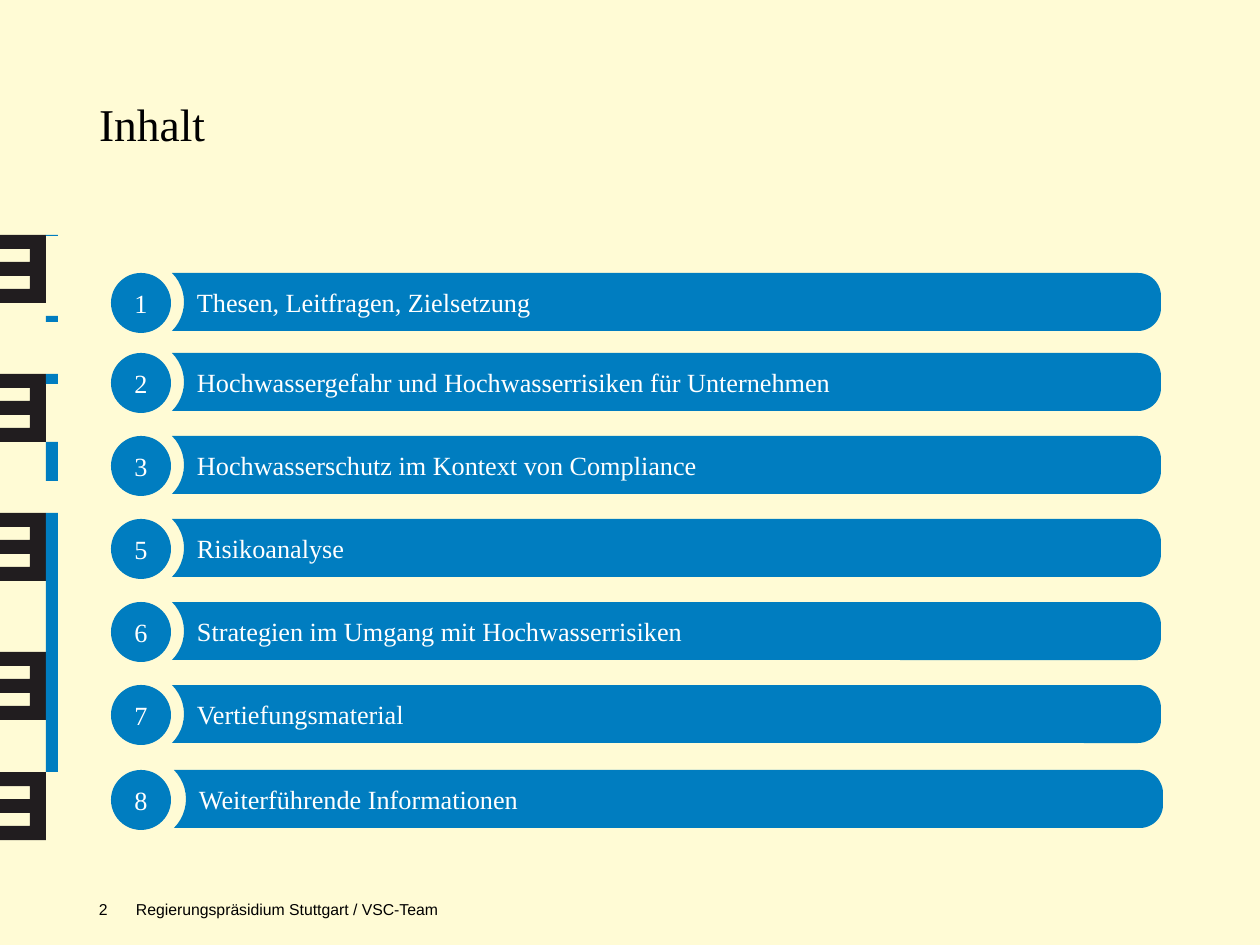
"""Build the agenda slide with numbered bars and a decorative strip at the left edge."""
import math

from pptx import Presentation
from pptx.dml.color import RGBColor
from pptx.enum.shapes import MSO_SHAPE
from pptx.enum.text import MSO_ANCHOR, MSO_AUTO_SIZE, PP_ALIGN
from pptx.util import Pt

RECTANGLE, OVAL = MSO_SHAPE.RECTANGLE, MSO_SHAPE.OVAL
TOP, MIDDLE = MSO_ANCHOR.TOP, MSO_ANCHOR.MIDDLE
LEFT, CENTER = PP_ALIGN.LEFT, PP_ALIGN.CENTER
NO_AUTOFIT = MSO_AUTO_SIZE.NONE
TITLE_ONLY = 5
SCALE = 914400 / 126
COLORS = {"cream": "FFFBD5", "blue": "007DC0", "dark": "211D1F", "white": "FFFFFF", "black": "000000"}
SERIF, SANS = "Times New Roman", "Arial"


def px(*values):
    return [round(value * SCALE) for value in values]


def write(shape, text, font_name, size, color, anchor, alignment, insets, spacing=1.0):
    text_frame = shape.text_frame
    text_frame.text = text
    text_frame.word_wrap = True
    text_frame.auto_size = NO_AUTOFIT
    text_frame.vertical_anchor = anchor
    (text_frame.margin_left, text_frame.margin_top,
     text_frame.margin_right, text_frame.margin_bottom) = px(*insets)
    paragraph = text_frame.paragraphs[0]
    paragraph.alignment = alignment
    paragraph.line_spacing = spacing
    font = paragraph.runs[0].font
    font.name, font.size = font_name, Pt(size)
    font.color.rgb = RGBColor.from_string(COLORS[color])


presentation = Presentation()
presentation.slide_width, presentation.slide_height = px(1260, 945)
slide = presentation.slides.add_slide(presentation.slide_layouts[TITLE_ONLY])
slide.background.fill.solid()
slide.background.fill.fore_color.rgb = RGBColor.from_string(COLORS["cream"])
shapes = slide.shapes
filled = []

comb_edges = [(0, 14), (30, 14), (30, 27), (0, 27), (0, 41), (30, 41),
              (30, 54), (0, 54), (0, 68), (46, 68), (46, 0)]
for top in (235, 374, 513, 652, 772):
    builder = shapes.build_freeform(*px(0, top))
    builder.add_line_segments([px(x, top + y) for x, y in comb_edges])
    filled.append((builder.convert_to_shape(), "dark"))

for top, height in ((235, 1), (316, 6), (374, 10), (442, 39), (513, 259)):
    filled.append((shapes.add_shape(RECTANGLE, *px(46, top, 12, height)), "blue"))

title = shapes.title
title.left, title.top, title.width, title.height = px(99, 91, 1116, 118)
write(title, "Inhalt", SERIF, 26, "black", TOP, LEFT, (0, 0, 0, 0), 1.1)

agenda = [
    (273, 172, "1", "Thesen, Leitfragen, Zielsetzung"),
    (353, 172, "2", "Hochwassergefahr und Hochwasserrisiken für Unternehmen"),
    (436, 172, "3", "Hochwasserschutz im Kontext von Compliance"),
    (519, 172, "5", "Risikoanalyse"),
    (602, 172, "6", "Strategien im Umgang mit Hochwasserrisiken"),
    (685, 172, "7", "Vertiefungsmaterial"),
    (770, 174, "8", "Weiterführende Informationen"),
]
bar_width, bar_height, corner_radius, notch_radius = 989, 58, 23, 41
corner_x = bar_width - corner_radius
arcs = [
    (corner_x, corner_radius, corner_radius, -90, 0),
    (corner_x, bar_height - corner_radius, corner_radius, 0, 90),
    (-29, bar_height / 2, notch_radius, 45, -45),
]
bar_edges = []
for center_x, center_y, radius, start, end in arcs:
    for step in range(13):
        angle = math.radians(start + (end - start) * step / 12)
        bar_edges.append((center_x + radius * math.cos(angle), center_y + radius * math.sin(angle)))

for top, left, number, topic in agenda:
    builder = shapes.build_freeform(*px(left + bar_edges[-1][0], top + bar_edges[-1][1]))
    builder.add_line_segments([px(left + x, top + y) for x, y in bar_edges])
    bar = builder.convert_to_shape()
    write(bar, topic, SERIF, 15, "white", MIDDLE, LEFT, (25, 6, 13, 6))
    circle = shapes.add_shape(OVAL, *px(111, top, 60, 60))
    write(circle, number, SERIF, 15, "white", MIDDLE, CENTER, (13, 6, 13, 6))
    filled += [(bar, "blue"), (circle, "blue")]

for shape, color in filled:
    shape.shadow.inherit = False
    shape.fill.solid()
    shape.fill.fore_color.rgb = RGBColor.from_string(COLORS[color])
    shape.line.fill.background()

for left, width, text in ((136, 854, "Regierungspräsidium Stuttgart / VSC-Team"), (99, 37, "2")):
    footer = shapes.add_textbox(*px(left, 898, width, 35))
    write(footer, text, SANS, 9, "black", TOP, LEFT, (0, 0, 0, 0), 1.1)

presentation.save("out.pptx")
